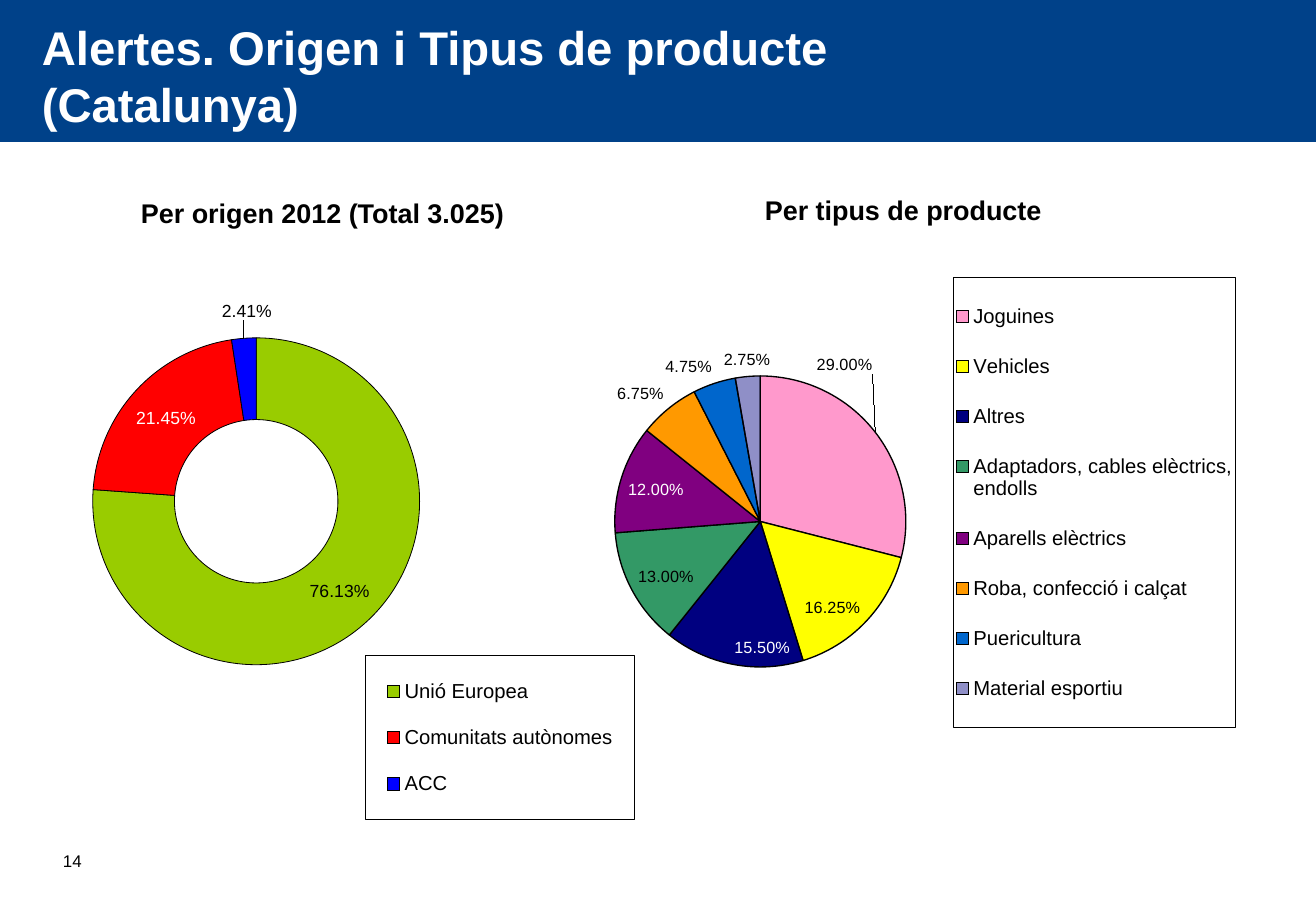
"""Build the slide on product alerts in Catalonia by origin and product type."""
from dataclasses import dataclass
from typing import Optional

import lxml.etree
import pptx
import pptx.chart.data
import pptx.dml.color
import pptx.enum.chart
import pptx.enum.shapes
import pptx.enum.text
import pptx.oxml
import pptx.oxml.ns
import pptx.util

RGBColor = pptx.dml.color.RGBColor
ChartType = pptx.enum.chart.XL_CHART_TYPE
LabelPosition = pptx.enum.chart.XL_LABEL_POSITION
Anchor = pptx.enum.text.MSO_ANCHOR
qn = pptx.oxml.ns.qn

EMU_PER_PX = 7526
FONT = "Arial"
LABEL_FORMAT = '0.00"%"'
BLACK = RGBColor(0x00, 0x00, 0x00)
WHITE = RGBColor(0xFF, 0xFF, 0xFF)
BANNER_BLUE = RGBColor(0x00, 0x41, 0x89)
LIME = RGBColor(0x99, 0xCC, 0x00)
RED = RGBColor(0xFF, 0x00, 0x00)
BLUE = RGBColor(0x00, 0x00, 0xFF)
PINK = RGBColor(0xFF, 0x99, 0xCC)
YELLOW = RGBColor(0xFF, 0xFF, 0x00)
NAVY = RGBColor(0x00, 0x00, 0x80)
GREEN = RGBColor(0x33, 0x99, 0x66)
PURPLE = RGBColor(0x80, 0x00, 0x80)
ORANGE = RGBColor(0xFF, 0x99, 0x00)
AZURE = RGBColor(0x00, 0x66, 0xCC)
INDIGO = RGBColor(0x33, 0x33, 0x99)


@dataclass(frozen=True)
class Box:
    left: int
    top: int
    width: int
    height: int

    def emu(self) -> list[int]:
        return [px(n) for n in (self.left, self.top, self.width, self.height)]

    def within(self, outer: "Box") -> dict[str, float]:
        return {
            "x": round((self.left - outer.left) / outer.width, 3),
            "y": round((self.top - outer.top) / outer.height, 3),
            "w": round(self.width / outer.width, 3),
            "h": round(self.height / outer.height, 3),
        }


@dataclass(frozen=True)
class Caption:
    lines: tuple[str, ...]
    box: Box
    size: int
    color: RGBColor = BLACK
    bold: bool = True
    wrap: bool = False
    anchor: Anchor = Anchor.TOP


@dataclass(frozen=True)
class Slice:
    name: str
    share: float
    fill: RGBColor
    label_color: RGBColor = BLACK
    position: Optional[LabelPosition] = None
    shift: Optional[tuple[float, float]] = None
    opacity: int = 100


@dataclass(frozen=True)
class Breakdown:
    kind: ChartType
    frame: Box
    ring: Box
    legend: Box
    label_size: float
    outline: float
    slices: tuple[Slice, ...]


INSIDE = LabelPosition.INSIDE_END
OUTSIDE = LabelPosition.OUTSIDE_END

CAPTIONS = (
    Caption(("14",), Box(51, 830, 275, 61), 10, bold=False, wrap=True, anchor=Anchor.MIDDLE),
    Caption(("Alertes. Origen i Tipus de producte", "(Catalunya)"), Box(30, 30, 921, 91),
            28, WHITE, wrap=True, anchor=Anchor.MIDDLE),
    Caption(("Per origen 2012 (Total 3.025)",), Box(129, 191, 392, 45), 16),
    Caption(("Per tipus de producte",), Box(753, 188, 305, 45), 16),
)

BREAKDOWNS = (
    Breakdown(
        ChartType.DOUGHNUT, Box(39, 265, 618, 569), Box(93, 338, 327, 327),
        Box(366, 656, 269, 164), 10.4, 0.47,
        (
            Slice("Unió Europea", 76.13, LIME),
            Slice("Comunitats autònomes", 21.45, RED, WHITE),
            Slice("ACC", 2.41, BLUE, shift=(0, -0.12)),
        ),
    ),
    Breakdown(
        ChartType.PIE, Box(549, 255, 714, 538), Box(615, 376, 291, 291),
        Box(953, 277, 283, 451), 9.6, 0.8,
        (
            Slice("Joguines", 29, PINK, position=OUTSIDE, shift=(-0.09, -0.1)),
            Slice("Vehicles", 16.25, YELLOW, position=INSIDE),
            Slice("Altres", 15.5, NAVY, WHITE, INSIDE),
            Slice("Adaptadors, cables elèctrics, endolls", 13, GREEN, position=INSIDE),
            Slice("Aparells elèctrics", 12, PURPLE, WHITE, INSIDE),
            Slice("Roba, confecció i calçat", 6.75, ORANGE, position=OUTSIDE),
            Slice("Puericultura", 4.75, AZURE, position=OUTSIDE),
            Slice("Material esportiu", 2.75, INDIGO, position=OUTSIDE, opacity=55),
        ),
    ),
)


def px(length: int) -> int:
    return length * EMU_PER_PX


def style_font(font, size: float, color: RGBColor, bold: bool = False) -> None:
    font.name, font.size, font.bold = FONT, pptx.util.Pt(size), bold
    font.color.rgb = color


def manual_layout(fractions: dict[str, float], modes: dict[str, str]) -> lxml.etree.ElementBase:
    layout = pptx.oxml.parse_xml(f'<c:layout {pptx.oxml.ns.nsdecls("c")}/>')
    manual = lxml.etree.SubElement(layout, qn("c:manualLayout"))
    for tag, value in {**modes, **fractions}.items():
        lxml.etree.SubElement(manual, qn(f"c:{tag}"), val=str(value))
    return layout


def draw_caption(slide, caption: Caption) -> None:
    frame = slide.shapes.add_textbox(*caption.box.emu()).text_frame
    frame.word_wrap, frame.vertical_anchor = caption.wrap, caption.anchor
    paragraph = frame.paragraphs[0]
    for index, line in enumerate(caption.lines):
        if index:
            paragraph.add_line_break()
        run = paragraph.add_run()
        run.text = line
        style_font(run.font, caption.size, caption.color, caption.bold)


def place_legend(chart, breakdown: Breakdown) -> None:
    chart.has_legend = True
    legend = chart.legend
    legend.position = pptx.enum.chart.XL_LEGEND_POSITION.RIGHT
    legend.include_in_layout = False
    style_font(legend.font, 12, BLACK)
    element = legend._element
    for stale in element.findall(qn("c:layout")):
        element.remove(stale)
    overlay = element.find(qn("c:overlay"))
    overlay.addprevious(manual_layout(breakdown.legend.within(breakdown.frame),
                                      {"xMode": "edge", "yMode": "edge"}))
    overlay.addnext(pptx.oxml.parse_xml(
        f'<c:spPr {pptx.oxml.ns.nsdecls("c", "a")}><a:noFill/><a:ln w="6350"><a:solidFill>'
        f'<a:srgbClr val="{BLACK}"/></a:solidFill></a:ln></c:spPr>'))


def style_slice(series, index: int, part: Slice, breakdown: Breakdown) -> None:
    point = series.points[index]
    point.format.fill.solid()
    point.format.fill.fore_color.rgb = part.fill
    if part.opacity < 100:
        color = point.format.fill._xPr.find(f'.//{qn("a:srgbClr")}')
        lxml.etree.SubElement(color, qn("a:alpha"), val=str(part.opacity * 1000))
    point.format.line.color.rgb = BLACK
    point.format.line.width = pptx.util.Pt(breakdown.outline)
    style_font(point.data_label.font, breakdown.label_size, part.label_color)
    if part.position is not None:
        point.data_label.position = part.position
    label = series._element.xpath(f"c:dLbls/c:dLbl[c:idx/@val='{index}']")[0]
    number_format = label.makeelement(
        qn("c:numFmt"), {"formatCode": LABEL_FORMAT, "sourceLinked": "0"})
    (label.find(qn("c:spPr")) if label.find(qn("c:spPr")) is not None
     else label.find(qn("c:txPr"))).addprevious(number_format)
    if part.shift:
        label.find(qn("c:idx")).addnext(manual_layout(dict(zip("xy", part.shift)), {}))


def draw_breakdown(slide, breakdown: Breakdown) -> None:
    data = pptx.chart.data.CategoryChartData(number_format="General")
    data.categories = [part.name for part in breakdown.slices]
    data.add_series("Series 1", [part.share for part in breakdown.slices])
    chart = slide.shapes.add_chart(breakdown.kind, *breakdown.frame.emu(), data).chart
    chart.has_title = False
    style_font(chart.font, breakdown.label_size, BLACK)
    chart.plots[0].vary_by_categories = True
    area = chart._chartSpace.chart.plotArea
    for stale in area.findall(qn("c:layout")):
        area.remove(stale)
    area.insert(0, manual_layout(breakdown.ring.within(breakdown.frame),
                                 {"layoutTarget": "inner", "xMode": "edge", "yMode": "edge"}))
    place_legend(chart, breakdown)
    for index, part in enumerate(breakdown.slices):
        style_slice(chart.plots[0].series[0], index, part, breakdown)


def main() -> None:
    deck = pptx.Presentation()
    deck.slide_width, deck.slide_height = px(1316), px(911)
    slide = deck.slides.add_slide(deck.slide_layouts[6])
    banner = slide.shapes.add_shape(
        pptx.enum.shapes.MSO_SHAPE.RECTANGLE, *Box(0, 0, 1316, 142).emu())
    banner.shadow.inherit = False
    banner.fill.solid()
    banner.fill.fore_color.rgb = BANNER_BLUE
    banner.line.fill.background()
    for breakdown in BREAKDOWNS:
        draw_breakdown(slide, breakdown)
    for caption in CAPTIONS:
        draw_caption(slide, caption)
    deck.save("out.pptx")


if __name__ == "__main__":
    main()
